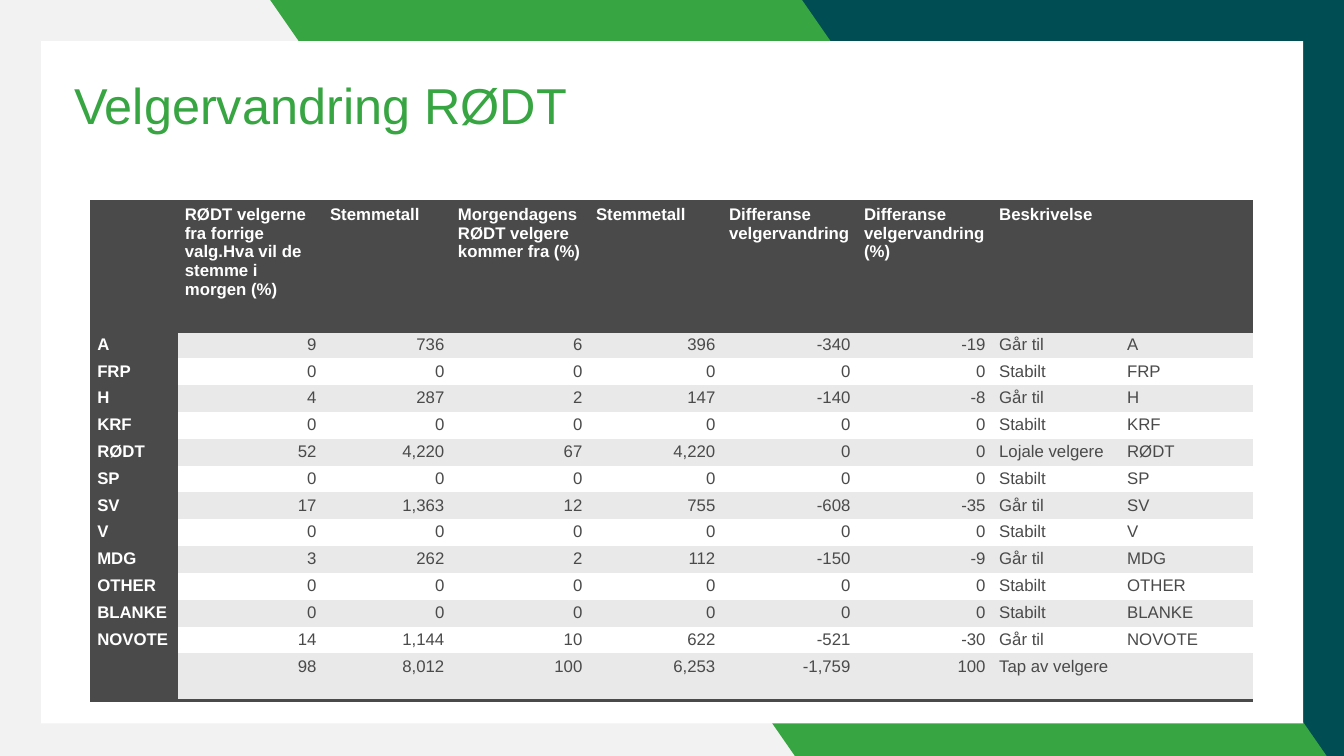
from dataclasses import dataclass

from lxml import etree
from pptx import Presentation
from pptx.dml.color import RGBColor
from pptx.enum.shapes import MSO_SHAPE
from pptx.enum.text import MSO_ANCHOR, MSO_AUTO_SIZE, PP_ALIGN
from pptx.oxml.ns import qn
from pptx.shapes.placeholder import SlidePlaceholder
from pptx.slide import Slide
from pptx.table import _Cell
from pptx.text.text import _Paragraph
from pptx.util import Pt

RECTANGLE = MSO_SHAPE.RECTANGLE
PARALLELOGRAM = MSO_SHAPE.PARALLELOGRAM
LEFT, CENTER, RIGHT = PP_ALIGN.LEFT, PP_ALIGN.CENTER, PP_ALIGN.RIGHT
BOTTOM = MSO_ANCHOR.BOTTOM
NO_AUTO_SIZE = MSO_AUTO_SIZE.NONE

LIGHT_GREY = RGBColor(0xF2, 0xF2, 0xF2)
TEAL = RGBColor(0x00, 0x4E, 0x54)
GREEN = RGBColor(0x37, 0xA5, 0x41)
WHITE = RGBColor(0xFF, 0xFF, 0xFF)
CHARCOAL = RGBColor(0x4A, 0x4A, 0x4A)
BAND_GREY = RGBColor(0xE9, 0xE9, 0xE9)

FONT = "Arial"
PLAIN_TABLE_STYLE = "{2D5ABB26-0587-4C30-8999-92F81FD0307C}"


@dataclass(frozen=True)
class Panel:
    left: float
    top: float
    width: float
    height: float
    color: RGBColor
    slant: float = 0


@dataclass(frozen=True)
class PartyRow:
    party: str
    figures: tuple[str, ...]
    description: str
    target: str

    def texts(self) -> tuple[str, ...]:
        return (self.party, *self.figures, self.description, self.target)


PANELS = (
    Panel(0, 0, 960, 543, LIGHT_GREY),
    Panel(571.5, 0, 388.5, 543, TEAL),
    Panel(193, 0, 756.7, 543, GREEN, slant=0.694),
    Panel(29.4, 29.4, 901.4, 487.4, WHITE),
)

HEADINGS = (
    "",
    "RØDT velgerne fra forrige valg.Hva vil de stemme i morgen (%)",
    "Stemmetall",
    "Morgendagens RØDT velgere kommer fra (%)",
    "Stemmetall",
    "Differanse velgervandring",
    "Differanse velgervandring (%)",
    "Beskrivelse",
    "",
)

ZEROS = ("0",) * 6
PARTY_ROWS = (
    PartyRow("A", ("9", "736", "6", "396", "-340", "-19"), "Går til", "A"),
    PartyRow("FRP", ZEROS, "Stabilt", "FRP"),
    PartyRow("H", ("4", "287", "2", "147", "-140", "-8"), "Går til", "H"),
    PartyRow("KRF", ZEROS, "Stabilt", "KRF"),
    PartyRow("RØDT", ("52", "4,220", "67", "4,220", "0", "0"), "Lojale velgere", "RØDT"),
    PartyRow("SP", ZEROS, "Stabilt", "SP"),
    PartyRow("SV", ("17", "1,363", "12", "755", "-608", "-35"), "Går til", "SV"),
    PartyRow("V", ZEROS, "Stabilt", "V"),
    PartyRow("MDG", ("3", "262", "2", "112", "-150", "-9"), "Går til", "MDG"),
    PartyRow("OTHER", ZEROS, "Stabilt", "OTHER"),
    PartyRow("BLANKE", ZEROS, "Stabilt", "BLANKE"),
    PartyRow("NOVOTE", ("14", "1,144", "10", "622", "-521", "-30"), "Går til", "NOVOTE"),
    PartyRow("", ("98", "8,012", "100", "6,253", "-1,759", "100"), "Tap av velgere", ""),
)

COLUMN_WIDTHS = (62.6, 103.7, 91.4, 98.6, 95, 96.5, 96.5, 91.4, 95)
HEADING_HEIGHT, PARTY_HEIGHT, TOTAL_HEIGHT = 92.8, 19.17, 33.6
ROW_HEIGHTS = (HEADING_HEIGHT, *[PARTY_HEIGHT] * (len(PARTY_ROWS) - 1), TOTAL_HEIGHT)
FIGURE_COLUMNS = range(1, 7)


def add_panel(slide: Slide, panel: Panel) -> None:
    shape = slide.shapes.add_shape(
        PARALLELOGRAM if panel.slant else RECTANGLE,
        Pt(panel.left), Pt(panel.top), Pt(panel.width), Pt(panel.height),
    )
    if panel.slant:
        shape.adjustments[0] = panel.slant
        shape.element.spPr.find(qn("a:xfrm")).set("flipH", "1")
    shape.shadow.inherit = False
    shape.fill.solid()
    shape.fill.fore_color.rgb = panel.color
    shape.line.fill.background()


def add_run(paragraph: _Paragraph, text: str, size: float, color: RGBColor, bold: bool) -> None:
    run = paragraph.add_run()
    run.text = text
    run.font.name = FONT
    run.font.size = Pt(size)
    run.font.bold = bold
    run.font.color.rgb = color


def format_title(title: SlidePlaceholder, text: str) -> None:
    title.left, title.top = Pt(42.5), Pt(39.6)
    title.width, title.height = Pt(373), Pt(59.8)
    frame = title.text_frame
    frame.margin_left = frame.margin_right = 0
    frame.margin_top = frame.margin_bottom = Pt(3)
    frame.vertical_anchor = BOTTOM
    frame.auto_size = NO_AUTO_SIZE
    frame.word_wrap = True
    paragraph = frame.paragraphs[0]
    paragraph.alignment = CENTER
    paragraph.line_spacing = 0.9
    add_run(paragraph, text, 36, GREEN, False)


def add_borders(cell: _Cell, sides: tuple[str, ...]) -> None:
    properties = cell._tc.get_or_add_tcPr()
    for position, side in enumerate(sides):
        line = etree.Element(qn(f"a:{side}"), w=str(Pt(2)))
        fill = etree.SubElement(line, qn("a:solidFill"))
        etree.SubElement(fill, qn("a:srgbClr"), val=str(CHARCOAL))
        properties.insert(position, line)


def fill_cell(cell: _Cell, text: str, row: int, column: int) -> None:
    emphasized = row == 0 or column == 0
    cell.margin_left = cell.margin_right = Pt(4.9)
    cell.margin_top = cell.margin_bottom = Pt(2.45)
    cell.fill.solid()
    cell.fill.fore_color.rgb = CHARCOAL if emphasized else BAND_GREY if row % 2 else WHITE
    if text:
        paragraph = cell.text_frame.paragraphs[0]
        paragraph.alignment = RIGHT if row and column in FIGURE_COLUMNS else LEFT
        add_run(paragraph, text, 12, WHITE if emphasized else CHARCOAL, emphasized)
    if row == 0:
        add_borders(cell, ("lnT", "lnB"))
    elif row == len(PARTY_ROWS):
        add_borders(cell, ("lnB",))


def add_voter_table(slide: Slide) -> None:
    contents = (HEADINGS, *(party_row.texts() for party_row in PARTY_ROWS))
    frame = slide.shapes.add_table(
        len(contents), len(HEADINGS), Pt(64.6), Pt(144),
        Pt(sum(COLUMN_WIDTHS)), Pt(sum(ROW_HEIGHTS)),
    )
    next(frame.element.iter(qn("a:tableStyleId"))).text = PLAIN_TABLE_STYLE
    table = frame.table
    table.horz_banding = False
    for column, width in zip(table.columns, COLUMN_WIDTHS):
        column.width = Pt(width)
    for row, height in zip(table.rows, ROW_HEIGHTS):
        row.height = Pt(height)
    for row_index, texts in enumerate(contents):
        for column_index, text in enumerate(texts):
            fill_cell(table.cell(row_index, column_index), text, row_index, column_index)


def main() -> None:
    presentation = Presentation()
    presentation.slide_width, presentation.slide_height = Pt(960), Pt(540)
    slide = presentation.slides.add_slide(presentation.slide_layouts[5])
    title = slide.shapes.title
    for panel in PANELS:
        add_panel(slide, panel)
    slide.shapes.element.append(title.element)
    format_title(title, "Velgervandring RØDT")
    add_voter_table(slide)
    presentation.save("out.pptx")


if __name__ == "__main__":
    main()
